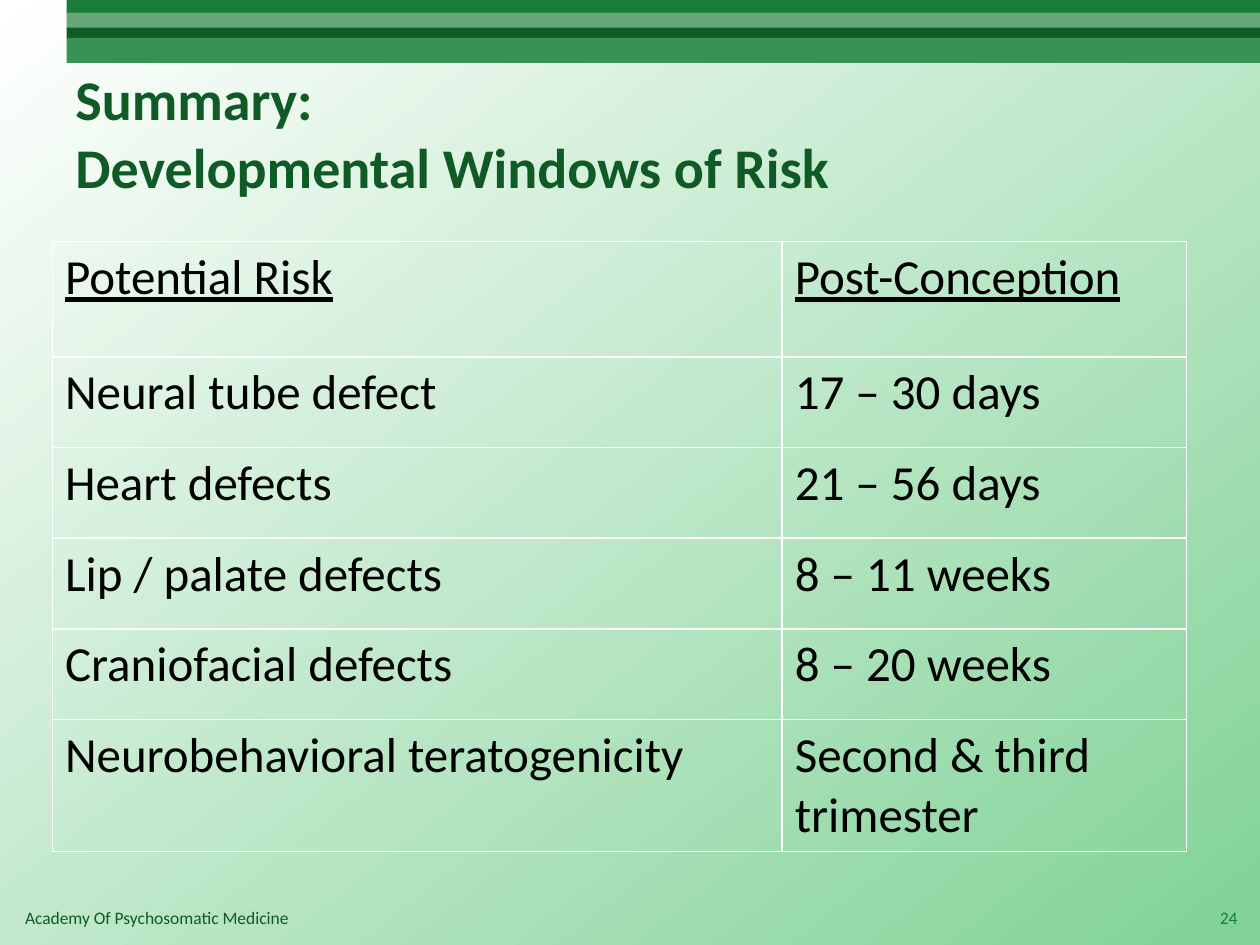
"""Build a slide with a table of developmental windows of risk."""
from dataclasses import dataclass

from lxml import etree
from pptx import Presentation
from pptx.dml.color import RGBColor
from pptx.enum.shapes import MSO_SHAPE
from pptx.enum.text import MSO_ANCHOR, PP_ALIGN
from pptx.oxml.ns import qn
from pptx.util import Pt

RECTANGLE = MSO_SHAPE.RECTANGLE
TOP, MIDDLE = MSO_ANCHOR.TOP, MSO_ANCHOR.MIDDLE
LEFT, RIGHT = PP_ALIGN.LEFT, PP_ALIGN.RIGHT


@dataclass(frozen=True)
class Theme:
    font: str = "Calibri"
    white: str = "FFFFFF"
    black: str = "000000"
    mint: str = "81D297"
    green: str = "177D38"
    sage: str = "66A677"
    forest: str = "105A25"
    leaf: str = "389155"
    title_size: int = 32
    table_size: int = 28
    footer_size: int = 10


theme = Theme()


def write(frame, text, *, size, color, bold=False, underline=False, align=LEFT, anchor=TOP):
    """Put formatted text into a text frame."""
    frame.word_wrap = True
    frame.vertical_anchor = anchor
    para = frame.paragraphs[0]
    para.text = text
    para.alignment = align
    for span in para.runs:
        span.font.name = theme.font
        span.font.size = Pt(size)
        span.font.bold = bold
        span.font.underline = underline
        span.font.color.rgb = RGBColor.from_string(color)


def add_borders(cell, color, width):
    """Draw a solid line on all four sides of a table cell."""
    properties = cell._tc.get_or_add_tcPr()
    for side in ("a:lnL", "a:lnR", "a:lnT", "a:lnB"):
        line = etree.SubElement(properties, qn(side), w=str(Pt(width)))
        fill = etree.SubElement(line, qn("a:solidFill"))
        etree.SubElement(fill, qn("a:srgbClr"), val=color)


deck = Presentation()
deck.slide_width, deck.slide_height = Pt(720), Pt(540)
page = deck.slides.add_slide(deck.slide_layouts[6])

background = page.background.fill
background.gradient()
background.gradient_angle = 308
for stop, color in zip(background.gradient_stops, (theme.white, theme.mint)):
    stop.color.rgb = RGBColor.from_string(color)

bands = [
    (0, 8, theme.green),
    (7.2, 9.3, theme.sage),
    (15.8, 6.5, theme.forest),
    (21.6, 14.4, theme.leaf),
]
for top, height, color in bands:
    band = page.shapes.add_shape(RECTANGLE, Pt(38), Pt(top), Pt(682), Pt(height))
    band.shadow.inherit = False
    band.fill.solid()
    band.fill.fore_color.rgb = RGBColor.from_string(color)
    band.line.fill.background()

footer = page.shapes.add_textbox(Pt(7.2), Pt(514.8), Pt(500), Pt(19.4))
write(footer.text_frame, "Academy Of Psychosomatic Medicine",
      size=theme.footer_size, color=theme.forest)

title = page.shapes.add_textbox(Pt(36), Pt(30.5), Pt(648), Pt(90))
write(title.text_frame, "Summary: \vDevelopmental Windows of Risk",
      size=theme.title_size, color=theme.forest, bold=True, anchor=MIDDLE)

number = page.shapes.add_textbox(Pt(685.4), Pt(510), Pt(28.8), Pt(28.8))
write(number.text_frame, "24", size=theme.footer_size, color=theme.green,
      align=RIGHT, anchor=MIDDLE)

risks = [
    ("Potential Risk", "Post-Conception"),
    ("Neural tube defect", "17 – 30 days"),
    ("Heart defects", "21 – 56 days"),
    ("Lip / palate defects", "8 – 11 weeks"),
    ("Craniofacial defects", "8 – 20 weeks"),
    ("Neurobehavioral teratogenicity", "Second & third trimester"),
]
column_widths = (417, 231)
row_heights = (66, 51.8, 51.8, 51.8, 51.8, 75.6)
table = page.shapes.add_table(len(risks), len(column_widths), Pt(30), Pt(138),
                              Pt(sum(column_widths)), Pt(sum(row_heights))).table
table.first_row = False
table.horz_banding = False
for column, width in zip(table.columns, column_widths):
    column.width = Pt(width)
for row_index, (row, height, texts) in enumerate(zip(table.rows, row_heights, risks)):
    row.height = Pt(height)
    for cell, text in zip(row.cells, texts):
        write(cell.text_frame, text, size=theme.table_size, color=theme.black,
              underline=row_index == 0)
        add_borders(cell, theme.white, 1)
        cell.fill.background()

deck.save("out.pptx")
